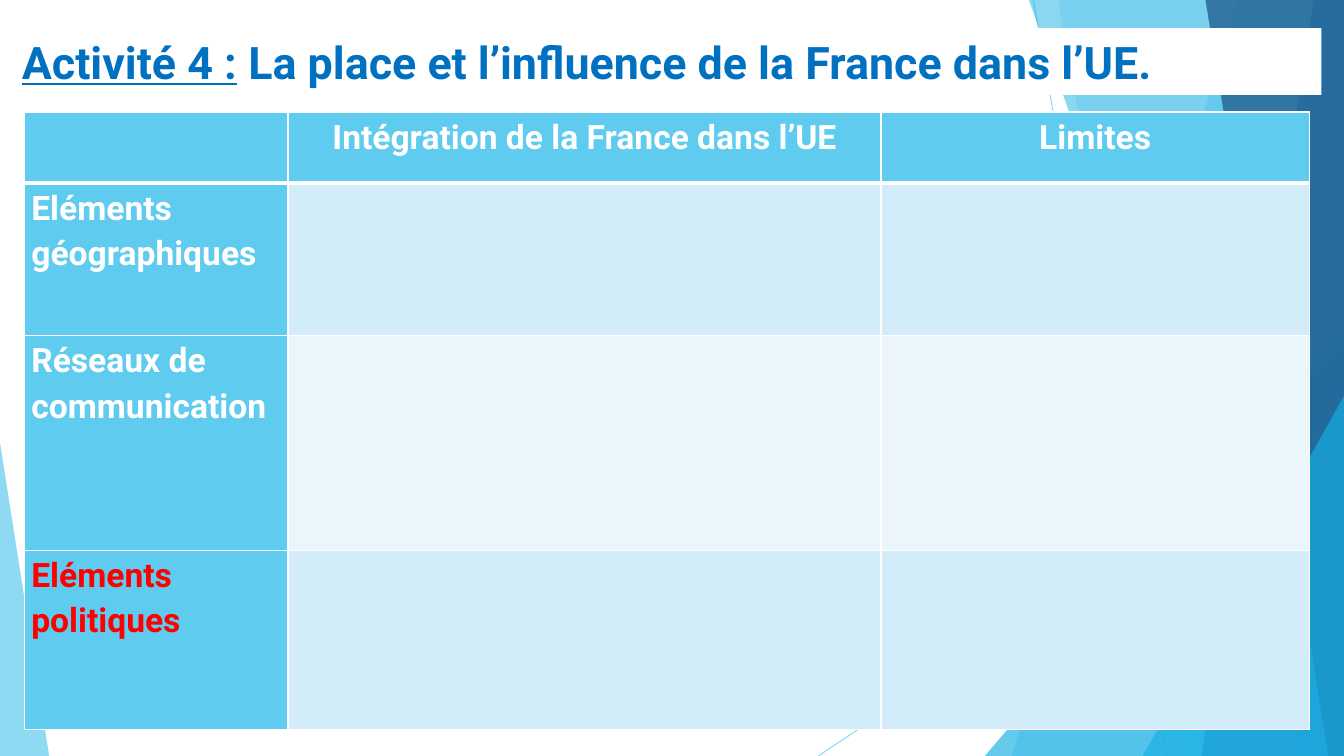
from pptx import Presentation
from pptx.dml.color import RGBColor
from pptx.enum.shapes import MSO_CONNECTOR as Link, MSO_SHAPE as Form
from pptx.enum.text import MSO_ANCHOR as Anchor, PP_ALIGN as Align
from pptx.oxml.ns import qn
from pptx.util import Cm, Pt
from lxml.etree import SubElement

WHITE = RGBColor(0xFF, 0xFF, 0xFF)
RED = RGBColor(0xFF, 0x00, 0x00)
TITLE = RGBColor(0x00, 0x70, 0xC0)
SKY = RGBColor(0x5F, 0xCB, 0xEF)
CYAN = RGBColor(0x17, 0xB0, 0xE4)
BLUE = RGBColor(0x2E, 0x83, 0xC3)
NAVY = RGBColor(0x22, 0x62, 0x92)
PALE = RGBColor(0xD2, 0xEC, 0xF9)
FAINT = RGBColor(0xEA, 0xF6, 0xFC)
WIDTH, HEIGHT = 33.87, 19.05


class Deck:
    font = "Roboto"

    def __init__(self):
        self.prs = Presentation()
        self.prs.slide_width, self.prs.slide_height = Cm(WIDTH), Cm(HEIGHT)
        self.slide = self.prs.slides.add_slide(self.prs.slide_layouts[6])
        self.shapes = self.slide.shapes

    def fade(self, shape, alpha):
        for tint in shape._element.spPr.iter(qn("a:srgbClr")):
            SubElement(tint, qn("a:alpha"), val=str(alpha * 1000))

    def paint(self, shape, color, alpha):
        shape.shadow.inherit = False
        shape.fill.solid()
        shape.fill.fore_color.rgb = color
        shape.line.fill.background()
        self.fade(shape, alpha)

    def line(self, x1, y1, x2, y2):
        link = self.shapes.add_connector(
            Link.STRAIGHT, Cm(x1), Cm(y1), Cm(x2), Cm(y2))
        link.line.color.rgb = SKY
        link.line.width = Pt(0.75)
        self.fade(link, 70)
        SubElement(link._element.spPr, qn("a:effectLst"))

    def band(self, top, foot, color, alpha):
        """Fill from a slanted left edge to the right side of the slide."""
        pen = self.shapes.build_freeform(Cm(top), 0)
        pen.add_line_segments([(Cm(WIDTH), 0), (Cm(WIDTH), Cm(HEIGHT)),
                               (Cm(foot), Cm(HEIGHT))])
        self.paint(pen.convert_to_shape(), color, alpha)

    def wedge(self, left, top, width, tip, color, alpha):
        """Triangle standing on the bottom of the slide."""
        shape = self.shapes.add_shape(Form.ISOSCELES_TRIANGLE, Cm(left), Cm(top),
                                      Cm(width), Cm(HEIGHT - top))
        shape.adjustments[0] = tip
        self.paint(shape, color, alpha)

    def words(self, para, text, size, color, under=False):
        run = para.add_run()
        run.text = text
        font = run.font
        font.name, font.size, font.bold = self.font, Pt(size), True
        font.underline = under
        font.color.rgb = color

    def title(self, left, top, width, height, runs):
        box = self.shapes.add_textbox(Cm(left), Cm(top), Cm(width), Cm(height))
        box.fill.solid()
        box.fill.fore_color.rgb = WHITE
        frame = box.text_frame
        frame.word_wrap = True
        frame.vertical_anchor = Anchor.MIDDLE
        for text, under in runs:
            self.words(frame.paragraphs[0], text, 32, TITLE, under)

    def edge(self, cell, side, width):
        line = SubElement(cell._tc.get_or_add_tcPr(), qn("a:ln" + side),
                          w=str(int(Pt(width))))
        fill = SubElement(line, qn("a:solidFill"))
        SubElement(fill, qn("a:srgbClr"), val=str(WHITE))

    def cell(self, cell, row, col, text, color):
        cell.margin_left = cell.margin_right = Cm(0.18)
        cell.margin_top = cell.margin_bottom = 0
        # The rule under the header is thicker
        thick = {"T": row == 1, "B": row == 0}
        for side in "LRTB":
            self.edge(cell, side, 3 if thick.get(side) else 1)
        cell.fill.solid()
        head = row == 0 or col == 0
        cell.fill.fore_color.rgb = SKY if head else PALE if row % 2 else FAINT
        if text:
            para = cell.text_frame.paragraphs[0]
            para.line_spacing = 1.15
            para.alignment = Align.LEFT if col == 0 else Align.CENTER
            self.words(para, text, 24, color)

    def table(self, left, top, cols, rows, texts, hot):
        grid = self.shapes.add_table(len(rows), len(cols), Cm(left), Cm(top),
                                     Cm(sum(cols)), Cm(sum(rows))).table
        for col, width in enumerate(cols):
            grid.columns[col].width = Cm(width)
        for row, height in enumerate(rows):
            grid.rows[row].height = Cm(height)
            for col in range(len(cols)):
                text = texts.get((row, col))
                self.cell(grid.cell(row, col), row, col, text,
                          RED if (row, col) == hot else WHITE)


def main():
    deck = Deck()

    # Background facets, back to front
    deck.line(26.04, 0, 29.41, HEIGHT)
    deck.line(WIDTH, 10.24, 20.62, HEIGHT)
    deck.band(31.19, 25.5, SKY, 36)
    deck.band(26.67, 30.05, SKY, 20)
    deck.wedge(24.82, 8.46, 9.05, 1, CYAN, 66)
    deck.band(25.93, 32.79, CYAN, 50)
    deck.band(33.1, 30.28, BLUE, 70)
    deck.band(30.38, 33.48, NAVY, 80)
    deck.wedge(28.8, 9.98, 5.07, 1, CYAN, 66)
    deck.wedge(0, 11.15, 1.24, 0, SKY, 70)

    # Table to fill in
    texts = {
        (0, 1): "Intégration de la France dans l’UE",
        (0, 2): "Limites",
        (1, 0): "Eléments géographiques",
        (2, 0): "Réseaux de communication",
        (3, 0): "Eléments politiques",
    }
    deck.table(0.61, 2.82, [6.65, 14.94, 10.8], [1.8, 3.84, 5.41, 4.52],
               texts, hot=(3, 0))

    # Heading
    deck.title(0.3, 0.71, 33, 1.68, [
        ("Activité 4 :", True),
        (" La place et l’influence de la France dans l’UE.", False),
    ])

    deck.prs.save("out.pptx")


if __name__ == "__main__":
    main()
